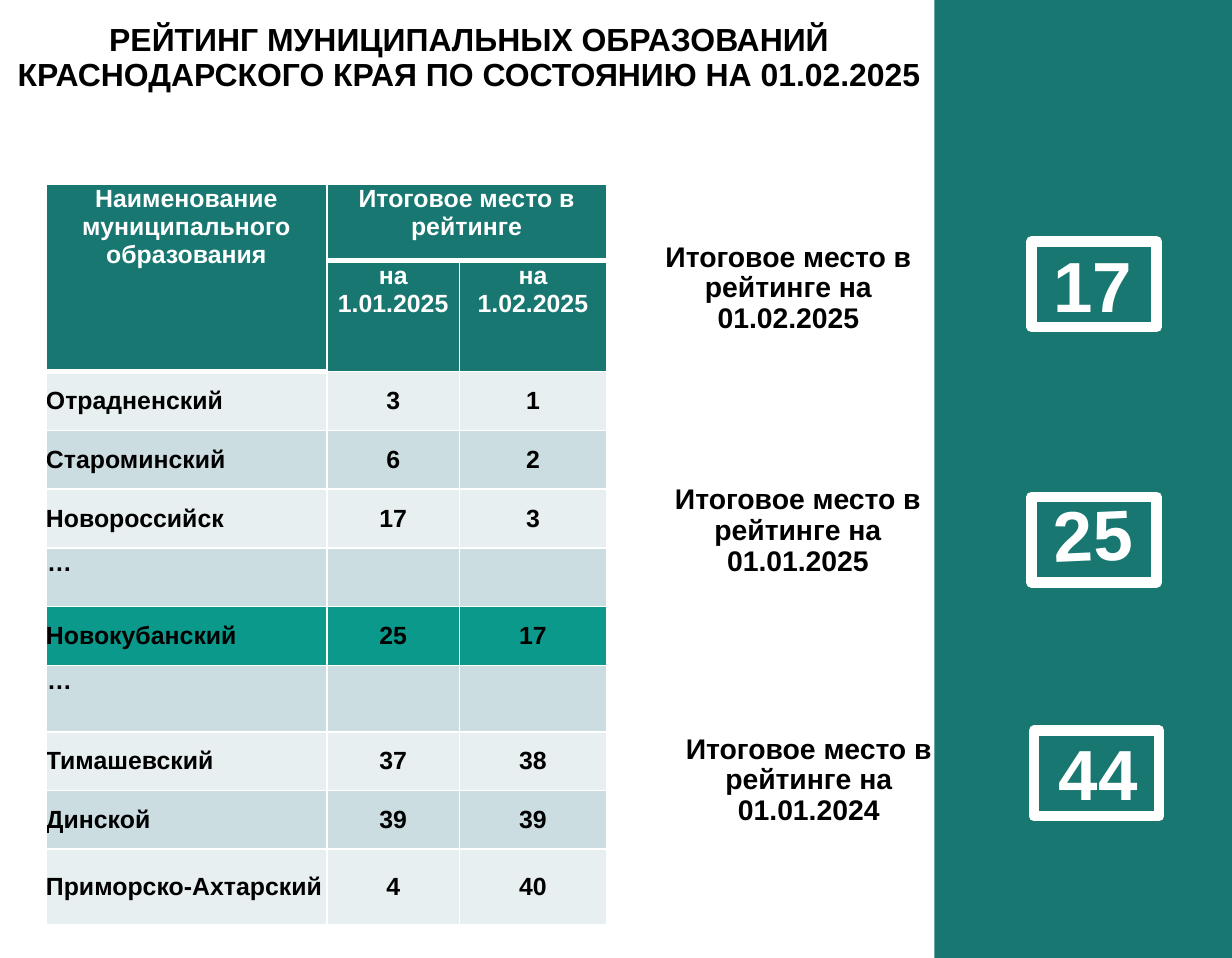
from pptx import Presentation
from pptx.dml.color import RGBColor
from pptx.enum.shapes import MSO_SHAPE as Shape
from pptx.enum.text import MSO_ANCHOR as Anchor, MSO_AUTO_SIZE as AutoSize, PP_ALIGN as Align
from pptx.oxml.ns import qn
from pptx.util import Pt
from lxml.etree import SubElement

PX = 9144  # 100 px to the inch

WHITE = RGBColor(0xFF, 0xFF, 0xFF)
BLACK = RGBColor(0x00, 0x00, 0x00)
TEAL = RGBColor(0x18, 0x77, 0x71)
HIGHLIGHT = RGBColor(0x0A, 0x99, 0x8B)
PALE = RGBColor(0xE7, 0xEF, 0xF1)
GREY = RGBColor(0xCC, 0xDD, 0xE1)

deck = Presentation()
deck.slide_width, deck.slide_height = 965 * PX, 750 * PX
page = deck.slides.add_slide(deck.slide_layouts[6])


def write(frame, text, size, color, align=Align.CENTER, spacing=None):
    frame.text = text
    para = frame.paragraphs[0]
    para.alignment = align
    para.line_spacing = spacing
    for span in para.runs:
        span.font.name = "Arial"
        span.font.size = Pt(size)
        span.font.bold = True
        span.font.color.rgb = color


def add_text(left, top, width, height, text, size, color, margins=(10, 5), spacing=None):
    box = page.shapes.add_textbox(left * PX, top * PX, width * PX, height * PX)
    frame = box.text_frame
    frame.word_wrap = True
    frame.margin_left = frame.margin_right = margins[0] * PX
    frame.margin_top = frame.margin_bottom = margins[1] * PX
    write(frame, text, size, color, spacing=spacing)
    return box


# Side panel
panel = page.shapes.add_shape(Shape.RECTANGLE, 732 * PX, 0, 233 * PX, 750 * PX)
panel.shadow.inherit = False
panel.fill.solid()
panel.fill.fore_color.rgb = TEAL
panel.line.fill.background()

# Title
title = add_text(-7, 5, 749, 82,
                 "РЕЙТИНГ МУНИЦИПАЛЬНЫХ ОБРАЗОВАНИЙ КРАСНОДАРСКОГО КРАЯ ПО СОСТОЯНИЮ НА 01.02.2025",
                 18, BLACK, spacing=0.9)
title.text_frame.vertical_anchor = Anchor.MIDDLE

# Rating table
HEADER_ROWS = 2
rows = [
    ("Наименование муниципального образования", "Итоговое место в рейтинге", ""),
    ("", "на 1.01.2025", "на 1.02.2025"),
    ("Отрадненский", "3", "1"),
    ("Староминский", "6", "2"),
    ("Новороссийск", "17", "3"),
    ("…", "", ""),
    ("Новокубанский", "25", "17"),
    ("…", "", ""),
    ("Тимашевский", "37", "38"),
    ("Динской", "39", "39"),
    ("Приморско-Ахтарский", "4", "40"),
]
column_widths = [220, 104, 115]
row_heights = [60, 87, 46, 46, 46, 46, 46, 52, 46, 46, 59]

table = page.shapes.add_table(len(rows), 3, 36 * PX, 144 * PX,
                              sum(column_widths) * PX, sum(row_heights) * PX).table
table.first_row = table.horz_banding = False
for column, width in zip(table.columns, column_widths):
    column.width = width * PX
for row, height in zip(table.rows, row_heights):
    row.height = height * PX
table.cell(0, 0).merge(table.cell(1, 0))
table.cell(0, 1).merge(table.cell(0, 2))

for r, values in enumerate(rows):
    is_header = r < HEADER_ROWS
    if is_header:
        fill = TEAL
    elif values[0] == "Новокубанский":
        fill = HIGHLIGHT
    else:
        fill = GREY if r % 2 else PALE
    at_top = is_header or values[0] == "…"
    for c, text in enumerate(values):
        cell = table.cell(r, c)
        cell.margin_left = cell.margin_right = cell.margin_top = PX if at_top else 0
        cell.margin_bottom = 0
        cell.vertical_anchor = Anchor.TOP if at_top else Anchor.MIDDLE
        if text:
            align = Align.CENTER if is_header or c else Align.LEFT
            write(cell.text_frame, text, 14, WHITE if is_header else BLACK, align)

        # Borders go before the fill in the cell properties
        thick_bottom = r == 0 or (r == 1 and c == 0)
        properties = cell._tc.get_or_add_tcPr()
        for side in ("a:lnL", "a:lnR", "a:lnT", "a:lnB"):
            points = 3 if side == "a:lnB" and thick_bottom else 1
            border = SubElement(properties, qn(side), w=str(Pt(points)))
            paint = SubElement(border, qn("a:solidFill"))
            SubElement(paint, qn("a:srgbClr"), val=str(WHITE))
        cell.fill.solid()
        cell.fill.fore_color.rgb = fill

# Places by date: label box, number box, tilt, frame corner
places = [
    ("01.02.2025", (513, 194, 209, 64), "17", (810, 184, 92, 77), 0, (808, 189)),
    ("01.01.2025", (513, 384, 224, 64), "25", (810, 379, 92, 77), -2.5, (808, 389)),
    ("01.01.2024", (518, 579, 231, 64), "44", (814, 566, 92, 77), 0, (810, 572)),
]
for date, label_box, place, number_box, tilt, (left, top) in places:
    label = add_text(*label_box, f"Итоговое место в рейтинге на {date}", 16, BLACK,
                     margins=(7, 4), spacing=0.9)
    label.text_frame.vertical_anchor = Anchor.MIDDLE

    number = add_text(*number_box, place, 40, WHITE)
    number.text_frame.auto_size = AutoSize.SHAPE_TO_FIT_TEXT
    number.rotation = tilt

    frame = page.shapes.add_shape(Shape.RECTANGLE, left * PX, top * PX, 98 * PX, 67 * PX)
    frame.shadow.inherit = False
    frame.fill.background()
    frame.line.color.rgb = WHITE
    frame.line.width = Pt(6)

deck.save("out.pptx")
